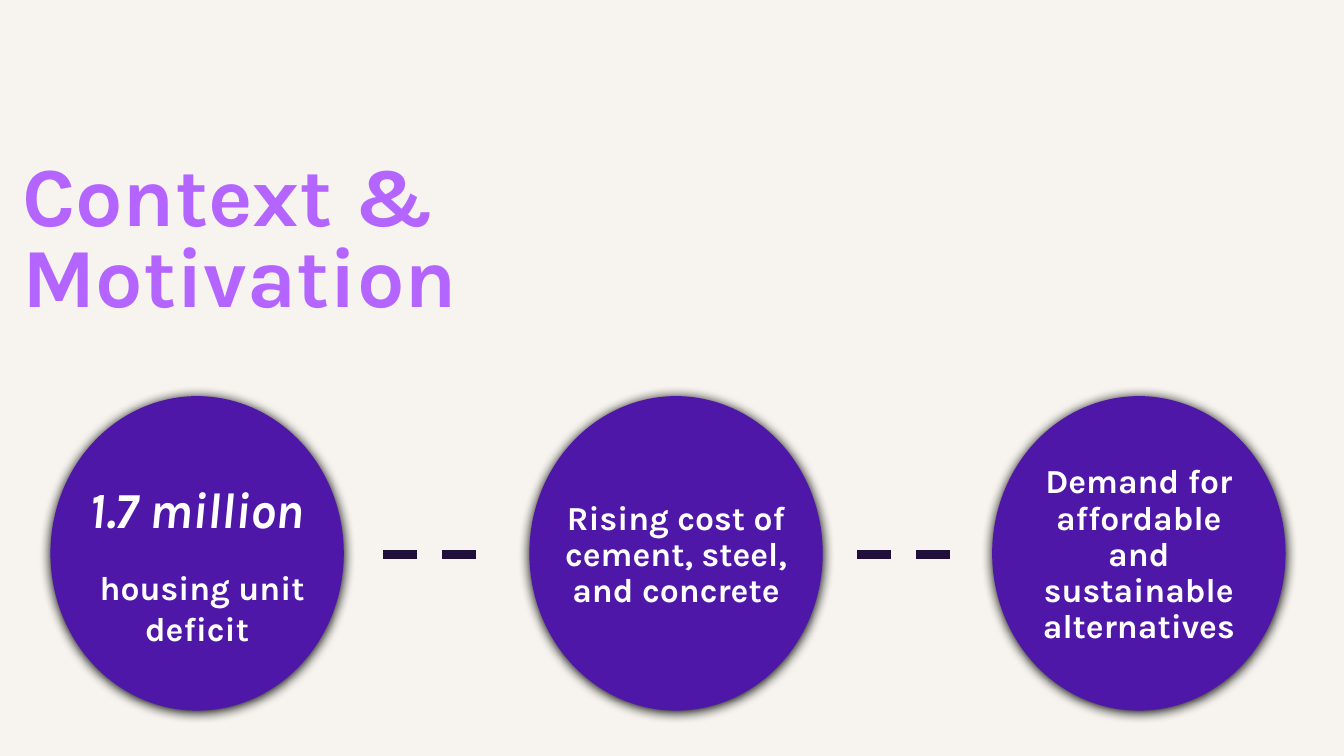
from lxml.etree import SubElement
from pptx import Presentation
from pptx.dml.color import RGBColor
from pptx.enum.dml import MSO_LINE
from pptx.enum.shapes import MSO_CONNECTOR, MSO_SHAPE
from pptx.enum.text import MSO_ANCHOR, PP_ALIGN
from pptx.oxml.ns import qn
from pptx.util import Inches, Pt

# Content
TITLE = "Context & Motivation"
# Each circle: left, space above the text,
# (text, size, italic, line spacing, first-line indent)
CIRCLES = [
    (0.5, 0.26, [("1.7 million", 36, True, 0.9, 0),
                 ("housing unit deficit", 24, False, 1.0, 0.1)]),
    (5.25, 0.04, [("Rising cost of cement, steel, and concrete",
                   24, False, 0.9, 0)]),
    (9.84, 0.04, [("Demand for affordable and sustainable alternatives",
                   24, False, 0.9, 0)]),
]
DASH_LEFTS = [3.8, 8.5]

# Style
FONT = "Karla"
CREAM = RGBColor(0xF7, 0xF4, 0xEF)
LILAC = RGBColor(0xB4, 0x65, 0xFF)
PURPLE = RGBColor(0x4F, 0x17, 0xA8)
NAVY = RGBColor(0x20, 0x0F, 0x3B)
WHITE = RGBColor(0xFF, 0xFF, 0xFF)

# Layout
CIRCLE_TOP, CIRCLE_W, CIRCLE_H = 3.93, 2.91, 3.12
MIDDLE = 5.5
DASH_W = 1.11
SIDE_INSET = -0.09  # widens the text area of the oval


def format_run(r, size, color, italic=False):
    r.font.name = FONT
    r.font.size = Pt(size)
    r.font.bold = True
    r.font.italic = italic
    r.font.color.rgb = color


def add_shadow(sp):
    effects = sp._element.spPr.find(qn("a:effectLst"))
    shadow = SubElement(effects, qn("a:outerShdw"), blurRad=str(Pt(8.5)),
                        dist=str(Pt(1)), dir="5400000", algn="ctr",
                        rotWithShape="0")
    SubElement(shadow, qn("a:srgbClr"), val="000000")


def add_circle(s, left, space_above, lines):
    sp = s.shapes.add_shape(MSO_SHAPE.OVAL, Inches(left), Inches(CIRCLE_TOP),
                            Inches(CIRCLE_W), Inches(CIRCLE_H))
    sp.fill.solid()
    sp.fill.fore_color.rgb = PURPLE
    sp.line.fill.background()
    sp.shadow.inherit = False
    add_shadow(sp)
    tf = sp.text_frame
    tf.word_wrap = True
    tf.vertical_anchor = MSO_ANCHOR.MIDDLE
    tf.margin_left = tf.margin_right = Inches(SIDE_INSET)
    tf.margin_top, tf.margin_bottom = Inches(space_above), 0
    tf.text = "\n".join(line[0] for line in lines)
    for i, (p, line) in enumerate(zip(tf.paragraphs, lines)):
        _, size, italic, spacing, indent = line
        p.alignment = PP_ALIGN.CENTER
        p.line_spacing = spacing
        p.space_before = Pt(20 if i else 0)
        p._p.get_or_add_pPr().set("indent", str(Inches(indent)))
        format_run(p.runs[0], size, WHITE, italic)


def add_dash(s, left):
    line = s.shapes.add_connector(MSO_CONNECTOR.STRAIGHT, Inches(left),
                                  Inches(MIDDLE), Inches(left + DASH_W),
                                  Inches(MIDDLE))
    line.line.color.rgb = NAVY
    line.line.width = Pt(6)
    line.line.dash_style = MSO_LINE.DASH
    SubElement(line._element.spPr, qn("a:effectLst"))


def main():
    prs = Presentation()
    prs.slide_width, prs.slide_height = Inches(13.33), Inches(7.5)
    s = prs.slides.add_slide(prs.slide_layouts[6])
    s.background.fill.solid()
    s.background.fill.fore_color.rgb = CREAM

    # Title
    box = s.shapes.add_textbox(Inches(0.22), Inches(0.54),
                               Inches(6.17), Inches(2.67))
    tf = box.text_frame
    tf.word_wrap = True
    tf.vertical_anchor = MSO_ANCHOR.BOTTOM
    tf.margin_left = tf.margin_right = tf.margin_top = tf.margin_bottom = 0
    tf.text = TITLE
    p = tf.paragraphs[0]
    p.line_spacing = 0.8
    format_run(p.runs[0], 60, LILAC)

    # Circles and the dashes between them
    for circle in CIRCLES:
        add_circle(s, *circle)
    for left in DASH_LEFTS:
        add_dash(s, left)

    prs.save("out.pptx")


if __name__ == "__main__":
    main()
